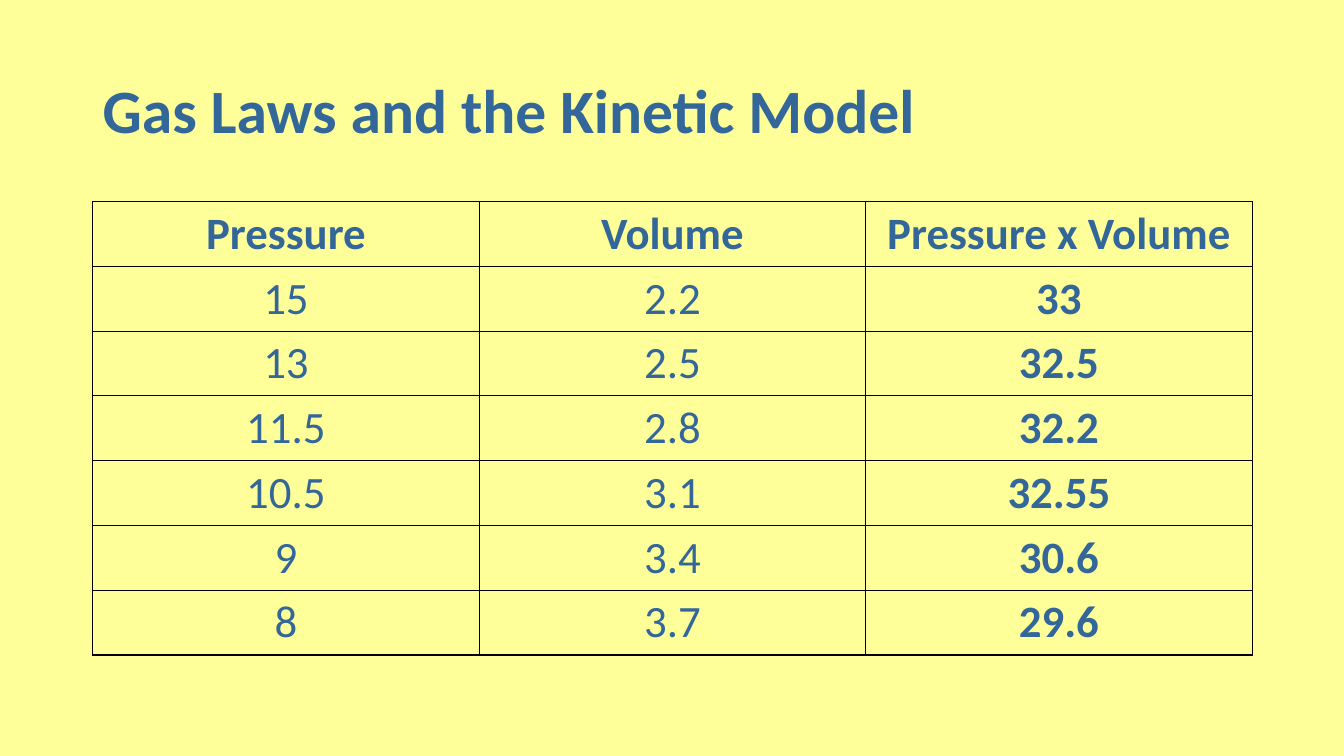
from lxml.etree import SubElement
from pptx import Presentation
from pptx.dml.color import RGBColor
from pptx.enum.text import MSO_ANCHOR, PP_ALIGN
from pptx.oxml.ns import qn
from pptx.util import Inches, Pt

TITLE = "Gas Laws and the Kinetic Model"
HEADINGS = ["Pressure", "Volume", "Pressure x Volume"]
READINGS = [
    ("15", "2.2", "33"),
    ("13", "2.5", "32.5"),
    ("11.5", "2.8", "32.2"),
    ("10.5", "3.1", "32.55"),
    ("9", "3.4", "30.6"),
    ("8", "3.7", "29.6"),
]
BACKGROUND, INK, RULE = "FFFF99", "336699", "000000"
LEFT, WIDTH = 0.92, 11.5
TITLE_TOP, TITLE_HEIGHT = 0.4, 1.45
TABLE_TOP, TABLE_HEIGHT = 2, 4.5
TITLE_FORMAT = {"name": "Calibri", "size": Pt(44), "bold": True}
CELL_FORMAT = {"name": "Calibri", "size": Pt(32)}


def paint(color, value):
    color.rgb = RGBColor.from_string(value)


def write(para, text, **formats):
    span = para.add_run()
    span.text = text
    for name, value in formats.items():
        setattr(span.font, name, value)
    paint(span.font.color, INK)


def add_borders(cell):
    properties = cell._tc.get_or_add_tcPr()
    for side in ("lnL", "lnR", "lnT", "lnB"):
        line = SubElement(properties, qn(f"a:{side}"), w=str(Pt(1)))
        fill = SubElement(line, qn("a:solidFill"))
        SubElement(fill, qn("a:srgbClr"), val=RULE)


def add_title(page):
    box = page.shapes.add_textbox(
        Inches(LEFT), Inches(TITLE_TOP), Inches(WIDTH), Inches(TITLE_HEIGHT))
    frame = box.text_frame
    frame.word_wrap = True
    frame.vertical_anchor = MSO_ANCHOR.MIDDLE
    para = frame.paragraphs[0]
    para.line_spacing = 0.9
    write(para, TITLE, **TITLE_FORMAT)


def add_readings(page):
    rows = [HEADINGS, *READINGS]
    table = page.shapes.add_table(
        len(rows), len(HEADINGS), Inches(LEFT), Inches(TABLE_TOP),
        Inches(WIDTH), Inches(TABLE_HEIGHT)).table
    table.first_row = table.horz_banding = False
    for row_index, row in enumerate(rows):
        for column_index, text in enumerate(row):
            cell = table.cell(row_index, column_index)
            add_borders(cell)
            cell.fill.background()
            para = cell.text_frame.paragraphs[0]
            para.alignment = PP_ALIGN.CENTER
            bold = row_index == 0 or column_index == len(HEADINGS) - 1
            write(para, text, bold=bold, **CELL_FORMAT)


def main():
    deck = Presentation()
    deck.slide_width, deck.slide_height = Inches(13.33), Inches(7.5)
    page = deck.slides.add_slide(deck.slide_layouts[6])
    page.background.fill.solid()
    paint(page.background.fill.fore_color, BACKGROUND)
    add_title(page)
    add_readings(page)
    deck.save("out.pptx")


if __name__ == "__main__":
    main()
